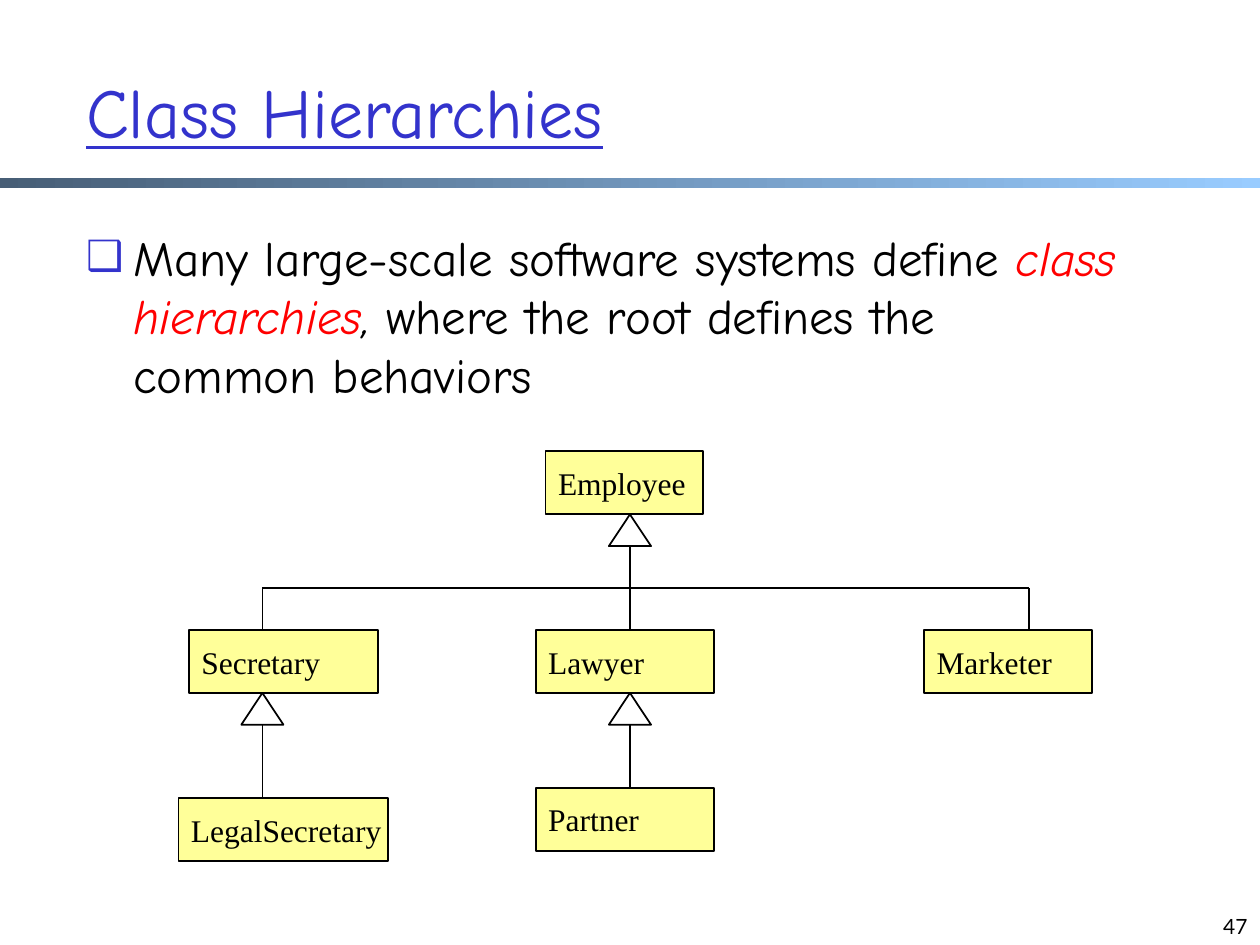
from dataclasses import dataclass

from lxml import etree
from pptx import Presentation
from pptx.dml.color import RGBColor
from pptx.enum.shapes import MSO_CONNECTOR, MSO_SHAPE
from pptx.enum.text import MSO_ANCHOR, MSO_AUTO_SIZE, PP_ALIGN
from pptx.oxml.ns import qn
from pptx.util import Cm, Pt

RECTANGLE = MSO_SHAPE.RECTANGLE
TRIANGLE = MSO_SHAPE.ISOSCELES_TRIANGLE
STRAIGHT = MSO_CONNECTOR.STRAIGHT
LEFT, RIGHT = PP_ALIGN.LEFT, PP_ALIGN.RIGHT
TOP, MIDDLE, BOTTOM = MSO_ANCHOR.TOP, MSO_ANCHOR.MIDDLE, MSO_ANCHOR.BOTTOM


@dataclass(frozen=True)
class Theme:
    heading_font: str = "Comic Neue"
    box_font: str = "Times New Roman"
    number_font: str = "Lato"
    title_size: int = 40
    body_size: int = 28
    box_size: int = 18
    number_size: int = 12
    accent: str = "3333CC"
    emphasis: str = "FF0000"
    ink: str = "000000"
    paper: str = "FFFFFF"
    box_fill: str = "FFFF99"
    bar_start: str = "475E76"
    bar_end: str = "99CCFF"


class SlideBuilder:
    def __init__(self, slide, theme):
        self.slide = slide
        self.theme = theme

    def format_run(self, run, font, size, color):
        run.font.name = font
        run.font.size = Pt(size)
        run.font.color.rgb = RGBColor.from_string(color)

    def place(self, shape, left, top, width, height):
        shape.left, shape.top = Cm(left), Cm(top)
        shape.width, shape.height = Cm(width), Cm(height)

    def set_frame(self, shape, anchor):
        frame = shape.text_frame
        frame.word_wrap = True
        frame.auto_size = MSO_AUTO_SIZE.NONE
        frame.vertical_anchor = anchor
        return frame

    def title(self, text, *bounds):
        shape = self.slide.shapes.title
        self.place(shape, *bounds)
        frame = self.set_frame(shape, MIDDLE)
        frame.text = text
        paragraph = frame.paragraphs[0]
        paragraph.alignment = LEFT
        run = paragraph.runs[0]
        self.format_run(run, self.theme.heading_font, self.theme.title_size, self.theme.accent)
        run.font.underline = True

    def body(self, parts, *bounds):
        """Write one bulleted paragraph from (text, color, italic) parts."""
        shape = self.slide.placeholders[1]
        self.place(shape, *bounds)
        paragraph = self.set_frame(shape, TOP).paragraphs[0]
        for text, color, italic in parts:
            run = paragraph.add_run()
            run.text = text
            self.format_run(run, self.theme.heading_font, self.theme.body_size, color)
            run.font.italic = italic
        self.bullet(paragraph, "❑")

    def bullet(self, paragraph, character):
        properties = paragraph._p.get_or_add_pPr()
        indent = Cm(0.95)
        properties.set("marL", str(indent))
        properties.set("indent", str(-indent))
        color = etree.SubElement(properties, qn("a:buClr"))
        etree.SubElement(color, qn("a:srgbClr"), val=self.theme.accent)
        etree.SubElement(properties, qn("a:buSzPct"), val="85000")
        etree.SubElement(properties, qn("a:buChar"), char=character)

    def shape(self, kind, fill, left, top, width, height):
        shape = self.slide.shapes.add_shape(kind, Cm(left), Cm(top), Cm(width), Cm(height))
        shape.shadow.inherit = False
        shape.fill.solid()
        shape.fill.fore_color.rgb = RGBColor.from_string(fill)
        shape.line.color.rgb = RGBColor.from_string(self.theme.ink)
        shape.line.width = Pt(1)
        return shape

    def gradient_bar(self, *bounds):
        bar = self.shape(RECTANGLE, self.theme.bar_start, *bounds)
        bar.line.fill.background()
        bar.fill.gradient()
        bar.fill.gradient_angle = 0
        colors = (self.theme.bar_start, self.theme.bar_end)
        for stop, color in zip(bar.fill.gradient_stops, colors):
            stop.color.rgb = RGBColor.from_string(color)

    def class_box(self, name, *bounds):
        box = self.shape(RECTANGLE, self.theme.box_fill, *bounds)
        frame = self.set_frame(box, MIDDLE)
        frame.margin_right = 0
        frame.text = name
        paragraph = frame.paragraphs[0]
        paragraph.alignment = LEFT
        self.format_run(paragraph.runs[0], self.theme.box_font, self.theme.box_size, self.theme.ink)

    def line(self, x1, y1, x2, y2):
        line = self.slide.shapes.add_connector(STRAIGHT, Cm(x1), Cm(y1), Cm(x2), Cm(y2))
        line.line.color.rgb = RGBColor.from_string(self.theme.ink)
        line.line.width = Pt(1)
        etree.SubElement(line._element.spPr, qn("a:effectLst"))

    def inheritance(self, x, child_top, parent_bottom):
        """Draw a line up to the parent, ending in a hollow triangle."""
        width, height = 0.85, 0.64
        self.line(x, child_top, x, parent_bottom)
        self.shape(TRIANGLE, self.theme.paper, x - width / 2, parent_bottom, width, height)

    def slide_number(self, text, left, top, width, height):
        box = self.slide.shapes.add_textbox(Cm(left), Cm(top), Cm(width), Cm(height))
        frame = self.set_frame(box, BOTTOM)
        frame.text = text
        paragraph = frame.paragraphs[0]
        paragraph.alignment = RIGHT
        self.format_run(paragraph.runs[0], self.theme.number_font, self.theme.number_size, self.theme.ink)


def main():
    presentation = Presentation()
    presentation.slide_width, presentation.slide_height = Cm(25.4), Cm(19.05)
    theme = Theme()
    builder = SlideBuilder(presentation.slides.add_slide(presentation.slide_layouts[1]), theme)

    # Heading, rule and page number
    builder.gradient_bar(0, 3.59, 25.4, 0.21)
    builder.slide_number("47", 19.47, 17.78, 5.93, 1.27)
    builder.title("Class Hierarchies", 1.48, 0.64, 21.59, 3.18)

    # Definition
    builder.body(
        [
            ("Many large-scale software systems define ", theme.ink, False),
            ("class hierarchies", theme.emphasis, True),
            (", ", theme.ink, True),
            ("where the root defines the common behaviors", theme.ink, False),
        ],
        1.48, 4.45, 21.59, 12.91,
    )

    # Class boxes: name, left, top, width
    box_height = 1.27
    root_top, middle_top = 9.1, 12.7
    legal_top, partner_top = 16.09, 15.88
    for name, left, top, width in [
        ("Employee", 11, root_top, 3.18),
        ("Secretary", 3.81, middle_top, 3.81),
        ("Lawyer", 10.8, middle_top, 3.6),
        ("Marketer", 18.63, middle_top, 3.39),
        ("LegalSecretary", 3.6, legal_top, 4.23),
        ("Partner", 10.8, partner_top, 3.6),
    ]:
        builder.class_box(name, left, top, width, box_height)

    # Branches from the root to its three subclasses
    secretary_x, lawyer_x, marketer_x = 5.29, 12.7, 20.75
    branch_y = 11.85
    builder.line(secretary_x, branch_y, marketer_x, branch_y)
    for x in (secretary_x, lawyer_x, marketer_x):
        builder.line(x, branch_y, x, middle_top)

    # Inheritance arrows
    builder.inheritance(lawyer_x, branch_y, root_top + box_height)
    builder.inheritance(secretary_x, legal_top, middle_top + box_height)
    builder.inheritance(lawyer_x, partner_top, middle_top + box_height)

    presentation.save("out.pptx")


if __name__ == "__main__":
    main()
